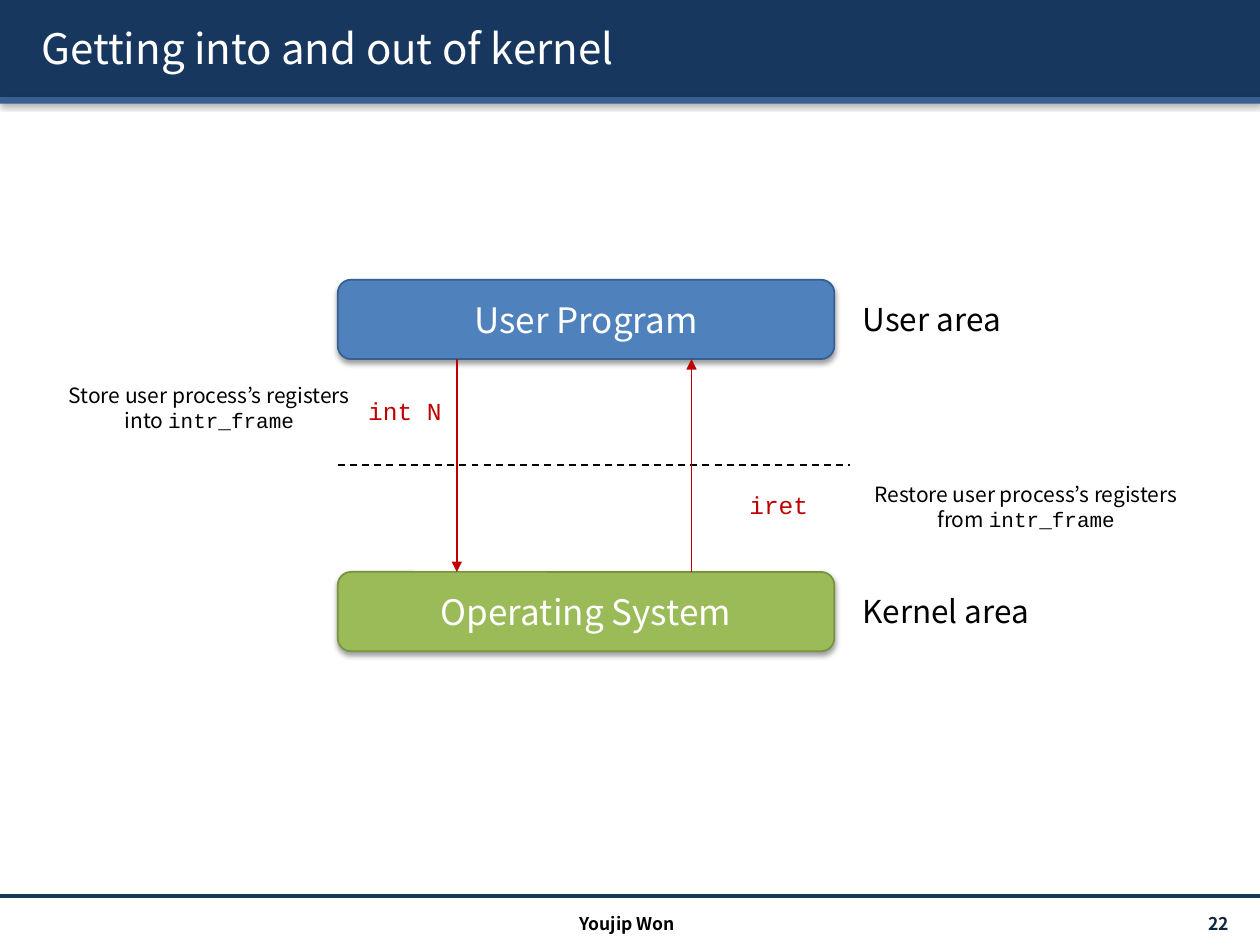
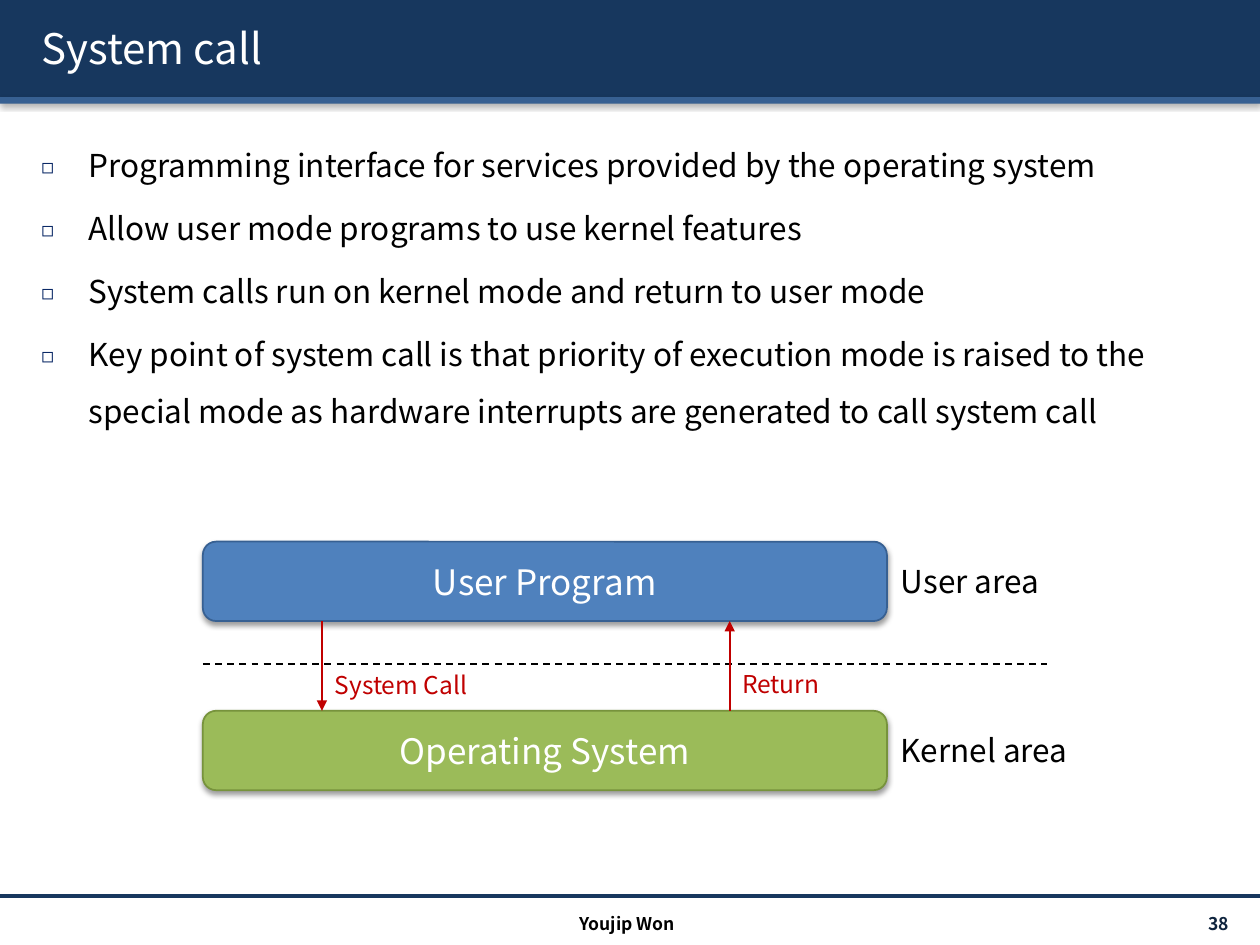
from dataclasses import dataclass

from lxml import etree
from pptx import Presentation
from pptx.dml.color import RGBColor
from pptx.enum.dml import MSO_LINE
from pptx.enum.shapes import MSO_CONNECTOR, MSO_SHAPE
from pptx.enum.text import MSO_ANCHOR, MSO_AUTO_SIZE, PP_ALIGN
from pptx.oxml.ns import qn
from pptx.util import Cm, Pt

LEFT, MID, RIGHT = PP_ALIGN.LEFT, PP_ALIGN.CENTER, PP_ALIGN.RIGHT
TOP, CENTER = MSO_ANCHOR.TOP, MSO_ANCHOR.MIDDLE
FIXED = MSO_AUTO_SIZE.NONE
RECT, ROUND = MSO_SHAPE.RECTANGLE, MSO_SHAPE.ROUNDED_RECTANGLE
LINE, DASH = MSO_CONNECTOR.STRAIGHT, MSO_LINE.DASH
TITLE_ONLY, TITLE_BODY = 5, 1


@dataclass(frozen=True)
class Theme:
    sans: str = "Noto Sans CJK KR"
    mono: str = "Courier New"
    white: str = "FFFFFF"
    black: str = "000000"
    navy: str = "17375E"
    steel: str = "376092"
    blue: str = "4F81BD"
    green: str = "9BBB59"
    moss: str = "77933C"
    red: str = "C00000"
    ink: str = "0F243E"
    bullet: str = "002060"
    title: int = 24
    block: int = 20
    body: int = 18
    label: int = 14
    note: int = 12
    foot: int = 10


def add_node(parent, tag, **attrs):
    node = etree.SubElement(parent, qn(tag))
    for name, value in attrs.items():
        node.set(name, str(value))
    return node


def add_shadow(effects, color, blur, dist, angle, alpha):
    shadow = add_node(effects, "a:outerShdw", blurRad=Pt(blur), dist=Pt(dist),
                      dir=angle * 60000, algn="tl", rotWithShape=0)
    tint = add_node(shadow, "a:srgbClr", val=color)
    add_node(tint, "a:alpha", val=alpha * 1000)


class Deck:
    def __init__(self, theme):
        self.theme = theme
        self.show = Presentation()
        self.show.slide_width, self.show.slide_height = Cm(25.4), Cm(19.05)
        self.slide = None

    def start(self, title, number, layout):
        theme = self.theme
        first = self.slide is None
        self.slide = self.show.slides.add_slide(self.show.slide_layouts[layout])
        if first:
            self.frame()
        holder = self.slide.shapes.title
        self.place(holder, 0.58, 0.15, 24.41, 1.63)
        holder.text_frame.text = title
        self.style(holder.text_frame, theme.title, theme.white, LEFT, CENTER)
        run = holder.text_frame.paragraphs[0].runs[0]
        effects = etree.Element(qn("a:effectLst"))
        add_shadow(effects, theme.black, 3, 3, 45, 100)
        run.font.element.find(qn("a:solidFill")).addnext(effects) if hasattr(
            run.font, "element") else run._r.rPr.find(qn("a:solidFill")).addnext(effects)
        self.text(number, 22.12, 18.31, 2.9, 0.61, theme.foot, theme.ink,
                  RIGHT, CENTER, bold=True)
        self.text("Youjip Won", 8.43, 18.29, 8.43, 0.61, theme.foot,
                  theme.black, MID, bold=True)

    def frame(self):
        theme = self.theme
        parts = [self.block(RECT, 0, 0, 25.4, 1.96, theme.navy),
                 self.block(RECT, 0, 1.96, 25.4, 0.13, theme.steel),
                 self.line(0, 18.06, 25.4, 18.06, theme.navy, 2)]
        tree = self.show.slide_master.shapes._spTree
        for number, part in enumerate(parts, 101):
            part._element.xpath("./*/p:cNvPr")[0].set("id", str(number))
            tree.append(part._element)

    def place(self, shape, left, top, width, height):
        shape.left, shape.top = Cm(left), Cm(top)
        shape.width, shape.height = Cm(width), Cm(height)

    def style(self, frame, size, color, align=LEFT, anchor=TOP, font=None, bold=False):
        frame.word_wrap = True
        frame.auto_size = FIXED
        frame.vertical_anchor = anchor
        for para in frame.paragraphs:
            para.alignment = align
            for run in para.runs:
                run.font.size = Pt(size)
                run.font.name = font or self.theme.sans
                run.font.bold = bold
                run.font.color.rgb = RGBColor.from_string(color)

    def text(self, words, left, top, width, height, size, color,
             align=LEFT, anchor=TOP, font=None, bold=False):
        box = self.slide.shapes.add_textbox(Cm(left), Cm(top), Cm(width), Cm(height))
        box.text_frame.text = words
        self.style(box.text_frame, size, color, align, anchor, font, bold)
        return box

    def note(self, words, code, left, top, width):
        theme = self.theme
        box = self.text(words, left, top, width, 1.27, theme.note, theme.black, MID)
        run = box.text_frame.paragraphs[-1].add_run()
        run.text = code
        run.font.name = theme.mono
        run.font.size = Pt(theme.note)
        run.font.color.rgb = RGBColor.from_string(theme.black)

    def block(self, kind, left, top, width, height, fill, edge=None, words=""):
        shape = self.slide.shapes.add_shape(kind, Cm(left), Cm(top), Cm(width), Cm(height))
        shape.fill.solid()
        shape.fill.fore_color.rgb = RGBColor.from_string(fill)
        if edge:
            shape.line.color.rgb = RGBColor.from_string(edge)
            shape.line.width = Pt(1)
        else:
            shape.line.fill.background()
        shape.shadow.inherit = False
        effects = shape._element.spPr.find(qn("a:effectLst"))
        add_shadow(effects, self.theme.black, 3.1, 1.6, 90, 38)
        if words:
            shape.text_frame.text = words
            self.style(shape.text_frame, self.theme.block, self.theme.white, MID, CENTER)
        return shape

    def line(self, x1, y1, x2, y2, color, width=1, dash=None, arrow=False):
        line = self.slide.shapes.add_connector(LINE, Cm(x1), Cm(y1), Cm(x2), Cm(y2))
        line.line.color.rgb = RGBColor.from_string(color)
        line.line.width = Pt(width)
        if dash:
            line.line.dash_style = dash
        props = line._element.spPr
        if arrow:
            add_node(props.find(qn("a:ln")), "a:tailEnd", type="triangle")
        add_node(props, "a:effectLst")
        return line

    def list(self, items):
        theme = self.theme
        holder = self.slide.placeholders[1]
        self.place(holder, 0.58, 2.44, 24.41, 15.29)
        frame = holder.text_frame
        frame.text = "\n".join(items)
        for index, para in enumerate(frame.paragraphs):
            props = para._p.get_or_add_pPr()
            props.set("marL", str(Cm(0.95)))
            props.set("indent", str(-Cm(0.95)))
            add_node(add_node(props, "a:buClr"), "a:srgbClr", val=theme.bullet)
            add_node(props, "a:buSzPct", val=65000)
            add_node(props, "a:buFont", typeface=theme.sans)
            add_node(props, "a:buChar", char="◻")
            para.line_spacing = 1.5
            para.space_before = Pt(0.2 * theme.body if index else 0)
        self.style(frame, theme.body, theme.black)

    def modes(self, left, top, width, drop, split, reach, back, side):
        theme = self.theme
        tall = 1.6
        base = top + drop
        call = left + 2.4
        self.block(ROUND, left, top, width, tall, theme.blue, theme.steel, "User Program")
        self.line(left, split, reach, split, theme.black, dash=DASH)
        self.block(ROUND, left, base, width, tall, theme.green, theme.moss, "Operating System")
        self.line(call, top + tall, call, base, theme.red, arrow=True)
        self.line(back, base, back, top + tall, theme.red, arrow=True)
        for words, y in (("User area", top), ("Kernel area", base)):
            self.text(words, side, y + 0.28, 4.4, 1.02, theme.body, theme.black)


def main():
    theme = Theme()
    deck = Deck(theme)

    deck.start("Getting into and out of kernel", "22", TITLE_ONLY)
    deck.modes(6.81, 5.64, 10.01, 5.89, split=9.37, reach=17.14, back=13.94, side=17.14)
    deck.text("int N", 7.16, 7.85, 2.01, 0.94, theme.label, theme.red, MID, font=theme.mono)
    deck.text("iret", 14.1, 9.75, 3.2, 0.76, theme.label, theme.red, MID, font=theme.mono)
    deck.note("Store user process’s registers\ninto ", "intr_frame", 0.69, 7.59, 7.06)
    deck.note("Restore user process’s registers\nfrom ", "intr_frame", 16.76, 9.58, 7.85)

    deck.start("System call", "38", TITLE_BODY)
    deck.list([
        "Programming interface for services provided by the operating system",
        "Allow user mode programs to use kernel features",
        "System calls run on kernel mode and return to user mode",
        "Key point of system call is that priority of execution mode is raised to the "
        "special mode as hardware interrupts are generated to call system call",
    ])
    deck.modes(4.09, 10.92, 13.79, 3.41, split=13.39, reach=21.11, back=14.71, side=17.91)
    deck.text("System Call", 6.5, 13.39, 3.4, 0.86, theme.label, theme.red)
    deck.text("Return", 14.71, 13.36, 2.74, 0.86, theme.label, theme.red)

    deck.show.save("out.pptx")


if __name__ == "__main__":
    main()
